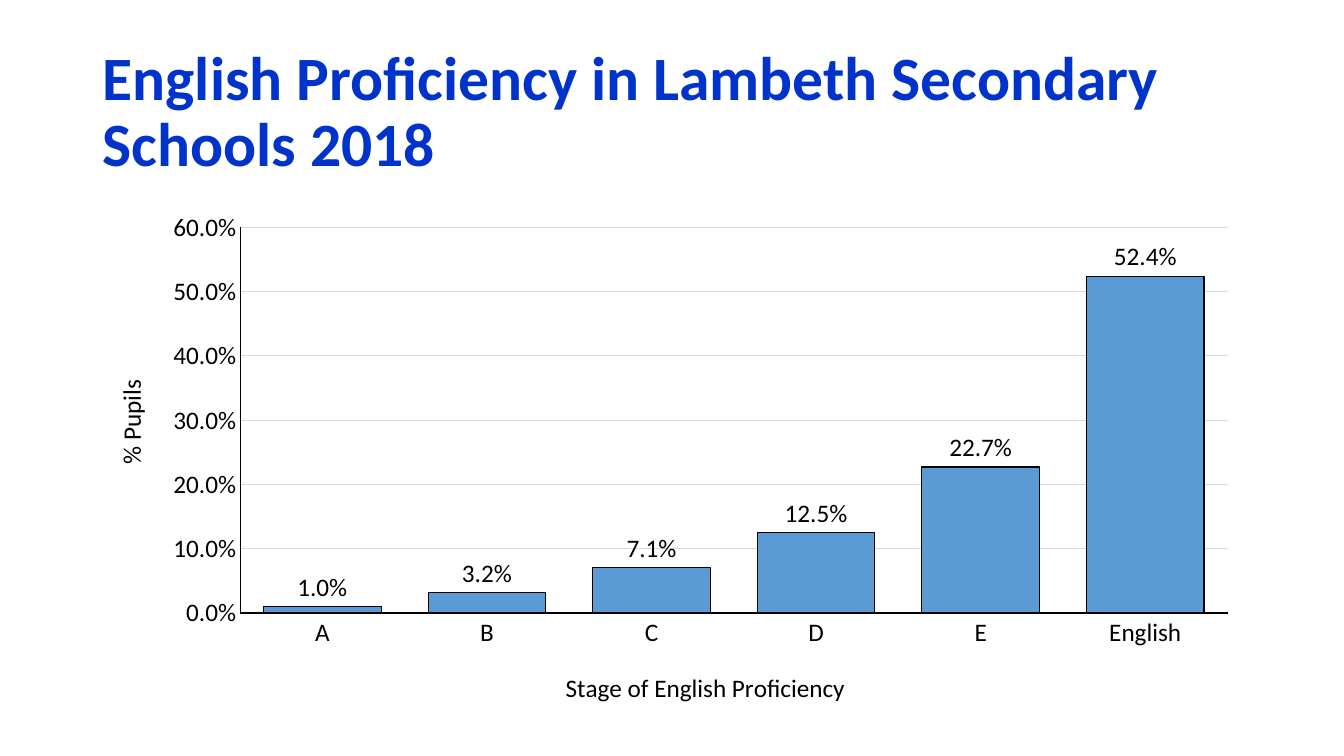
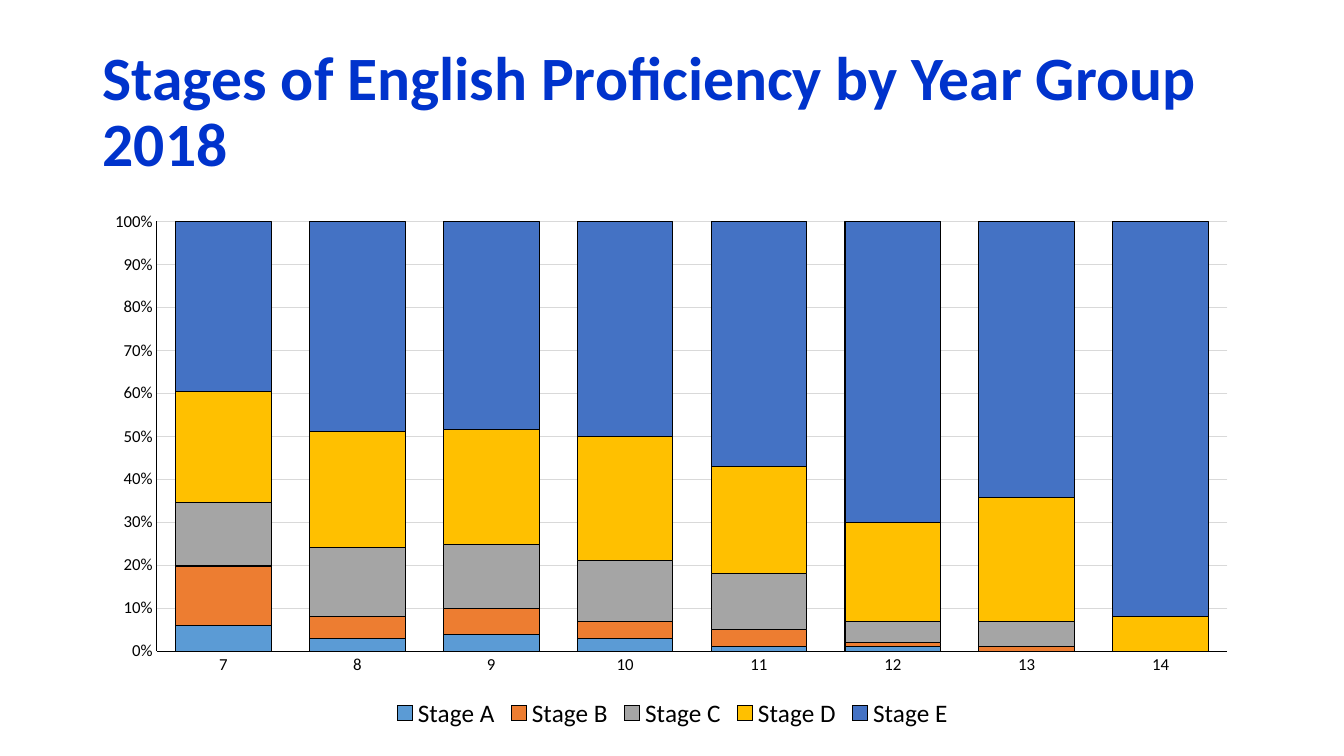
from dataclasses import dataclass

from lxml.etree import SubElement
from pptx import Presentation
from pptx.chart.data import CategoryChartData
from pptx.dml.color import RGBColor
from pptx.enum.chart import XL_CHART_TYPE, XL_LABEL_POSITION, XL_LEGEND_POSITION, XL_TICK_MARK
from pptx.enum.text import MSO_ANCHOR
from pptx.oxml.ns import qn
from pptx.util import Cm, Pt


@dataclass(frozen=True)
class Theme:
    font: str = "Calibri"
    title_color: RGBColor = RGBColor(0x00, 0x33, 0xCC)
    ink: RGBColor = RGBColor(0x00, 0x00, 0x00)
    grid: RGBColor = RGBColor(0xD9, 0xD9, 0xD9)
    fills: tuple = tuple(map(RGBColor.from_string, ("5B9BD5", "ED7D31", "A5A5A5", "FFC000", "4472C4")))
    title_size: Pt = Pt(44)
    large: Pt = Pt(18)
    small: Pt = Pt(12)
    line: Pt = Pt(0.75)


theme = Theme()


def set_font(font, size, color=theme.ink, bold=False):
    font.name = theme.font
    font.size = size
    font.bold = bold
    font.color.rgb = color


def place(parent, index, **fractions):
    for old in parent.findall(qn("c:layout")):
        parent.remove(old)
    layout = SubElement(parent, qn("c:layout"))
    parent.insert(index, layout)
    manual = SubElement(layout, qn("c:manualLayout"))
    if "w" in fractions:
        SubElement(manual, qn("c:layoutTarget")).set("val", "inner")
    for mode in ("xMode", "yMode"):
        SubElement(manual, qn(f"c:{mode}")).set("val", "edge")
    for name, value in fractions.items():
        SubElement(manual, qn(f"c:{name}")).set("val", str(value))


slides = [
    {
        "title": "English Proficiency in Lambeth Secondary Schools 2018",
        "title_width": Cm(29.21),
        "chart_height": Cm(12.93),
        "type": XL_CHART_TYPE.COLUMN_CLUSTERED,
        "categories": ["A", "B", "C", "D", "E", "English"],
        "series": {"Series 1": [0.01, 0.032, 0.071, 0.125, 0.227, 0.524]},
        "overlap": -27,
        "axis_size": theme.large,
        "axis_format": "###0.0%",
        "scale": (0.6, 0.1),
        "plot": {"x": 0.127, "y": 0.05, "w": 0.852, "h": 0.752},
        "axis_titles": [
            ("Stage of English Proficiency", 0, {"x": 0.404, "y": 0.905}),
            ("% Pupils", -5400000, {"x": 0.014, "y": 0.338}),
        ],
        "labels": True,
        "legend": False,
    },
    {
        "title": "Stages of English Proficiency by Year Group 2018",
        "title_width": Cm(30.76),
        "chart_height": Cm(13.41),
        "type": XL_CHART_TYPE.COLUMN_STACKED_100,
        "categories": [str(year) for year in range(7, 15)],
        "series": {
            "Stage A": [6, 3, 4, 3, 1, 1, 0, 0],
            "Stage B": [14, 5, 6, 4, 4, 1, 1, 0],
            "Stage C": [15, 16, 15, 14, 13, 5, 6, 0],
            "Stage D": [26, 27, 27, 29, 25, 23, 29, 8],
            "Stage E": [40, 49, 49, 50, 57, 70, 65, 92],
        },
        "overlap": 100,
        "axis_size": theme.small,
        "axis_format": "0%",
        "scale": (1, 0.1),
        "plot": {"x": 0.055, "y": 0.037, "w": 0.924, "h": 0.808},
        "axis_titles": [],
        "labels": False,
        "legend": True,
    },
]

deck = Presentation()
deck.slide_width = Cm(33.87)
deck.slide_height = Cm(19.05)
left = Cm(2.34)

for content in slides:
    page = deck.slides.add_slide(deck.slide_layouts[6])

    box = page.shapes.add_textbox(left, Cm(1.02), content["title_width"], Cm(3.68))
    frame = box.text_frame
    frame.word_wrap = True
    frame.vertical_anchor = MSO_ANCHOR.MIDDLE
    para = frame.paragraphs[0]
    para.text = content["title"]
    para.line_spacing = 0.9
    set_font(para.font, theme.title_size, theme.title_color, bold=True)

    data = CategoryChartData()
    data.categories = content["categories"]
    for name, values in content["series"].items():
        data.add_series(name, values)
    chart = page.shapes.add_chart(
        content["type"], left, Cm(5.08), Cm(29.21), content["chart_height"], data
    ).chart
    chart.has_title = False
    set_font(chart.font, content["axis_size"])
    place(chart.element.xpath("//c:plotArea")[0], 0, **content["plot"])

    axes = (chart.category_axis, chart.value_axis)
    for axis in axes:
        axis.major_tick_mark = axis.minor_tick_mark = XL_TICK_MARK.NONE
        axis.format.line.color.rgb = theme.ink
        axis.format.line.width = theme.line
        set_font(axis.tick_labels.font, content["axis_size"])

    value_axis = chart.value_axis
    value_axis.minimum_scale = 0
    value_axis.maximum_scale, value_axis.major_unit = content["scale"]
    value_axis.tick_labels.number_format = content["axis_format"]
    value_axis.tick_labels.number_format_is_linked = False
    value_axis.major_gridlines.format.line.color.rgb = theme.grid
    value_axis.major_gridlines.format.line.width = theme.line

    for axis, (words, rotation, position) in zip(axes, content["axis_titles"]):
        axis_title = axis.axis_title
        para = axis_title.text_frame.paragraphs[0]
        para.text = words
        set_font(para.font, theme.large)
        axis_title.element.xpath(".//a:bodyPr")[0].set("rot", str(rotation))
        place(axis_title.element, 1, **position)

    plot = chart.plots[0]
    plot.gap_width = 40
    plot.overlap = content["overlap"]
    plot.vary_by_categories = False
    for series, color in zip(plot.series, theme.fills):
        series.format.fill.solid()
        series.format.fill.fore_color.rgb = color
        series.format.line.color.rgb = theme.ink
        series.format.line.width = theme.line

    if content["labels"]:
        plot.has_data_labels = True
        labels = plot.data_labels
        labels.show_value = True
        labels.position = XL_LABEL_POSITION.OUTSIDE_END
        labels.number_format = content["axis_format"]
        labels.number_format_is_linked = False
        set_font(labels.font, theme.large)

    chart.has_legend = content["legend"]
    if chart.has_legend:
        chart.legend.position = XL_LEGEND_POSITION.BOTTOM
        chart.legend.include_in_layout = False
        set_font(chart.legend.font, theme.large)

deck.save("out.pptx")
